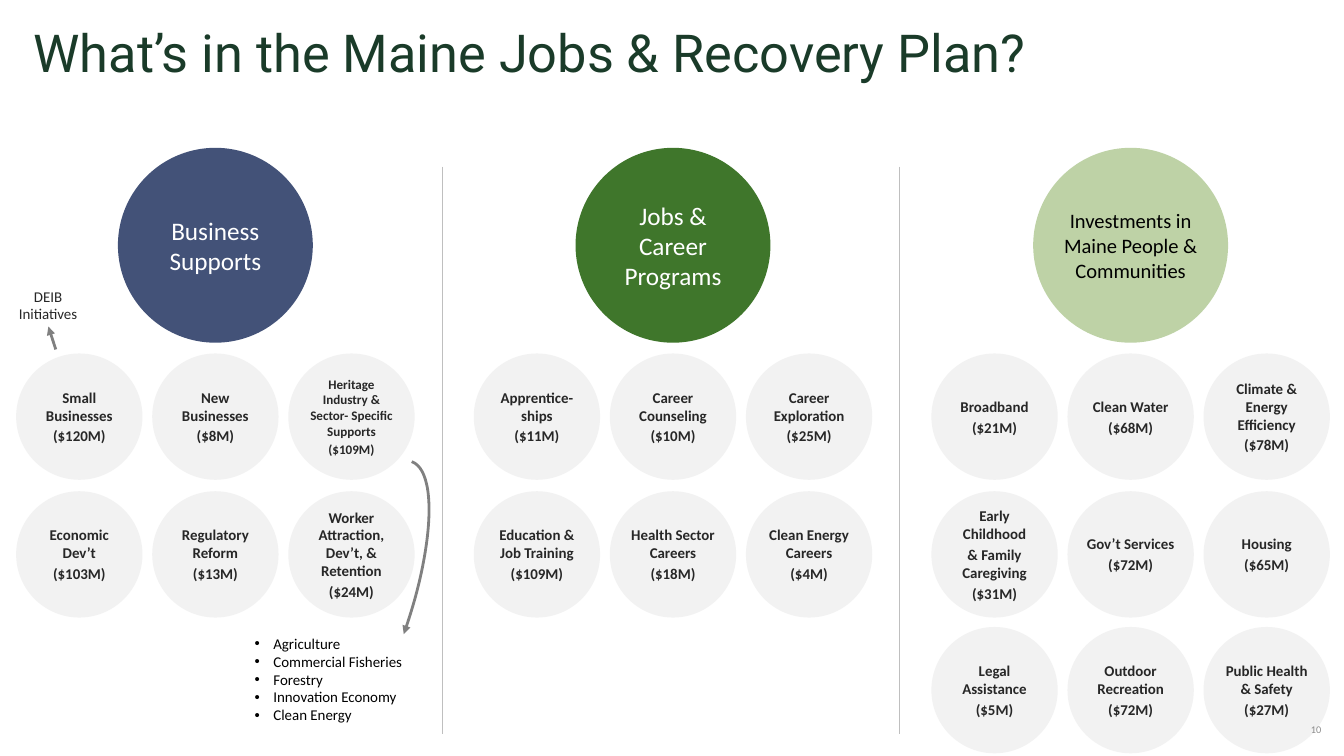
import pptx
import pptx.util
from pptx.dml.color import RGBColor
from pptx.enum.shapes import MSO_CONNECTOR, MSO_SHAPE
from pptx.enum.text import MSO_ANCHOR, PP_ALIGN
from pptx.oxml.ns import qn
from lxml import etree

Inch, Pt = pptx.util.Inches, pptx.util.Pt

HUE = {"title": "1A3B29", "ink": "272727", "black": "000000", "white": "FFFFFF",
       "navy": "435278", "green": "3F762B", "sage": "BED2A6", "disc": "F2F2F2",
       "rule": "BFBFBF", "arrow": "808080", "page": "8C8C8C"}

TITLE = "What’s in the Maine Jobs & Recovery Plan?"
PAGE = "10"
ASIDE = "DEIB Initiatives"
FIELDS = ["Agriculture", "Commercial Fisheries", "Forestry",
          "Innovation Economy", "Clean Energy"]
# Pillar: hub text, fill, ink, text size, then rows of programs
PILLARS = [
    (["Business Supports"], "navy", "white", 27, [
        [["Small Businesses", "($120M)"], ["New Businesses", "($8M)"],
         ["Heritage Industry & Sector- Specific Supports", "($109M)"]],
        [["Economic Dev’t", "($103M)"], ["Regulatory Reform", "($13M)"],
         ["Worker Attraction, Dev’t, & Retention", "($24M)"]]]),
    (["Jobs & Career Programs"], "green", "white", 27, [
        [["Apprentice-ships", "($11M)"], ["Career Counseling", "($10M)"],
         ["Career Exploration", "($25M)"]],
        [["Education & Job Training", "($109M)"], ["Health Sector Careers", "($18M)"],
         ["Clean Energy Careers", "($4M)"]]]),
    (["Investments in Maine People &", "Communities"], "sage", "black", 22, [
        [["Broadband", "($21M)"], ["Clean Water", "($68M)"],
         ["Climate & Energy Efficiency", "($78M)"]],
        [["Early Childhood", "& Family Caregiving", "($31M)"],
         ["Gov’t Services", "($72M)"], ["Housing", "($65M)"]],
        [["Legal Assistance", "($5M)"], ["Outdoor Recreation", "($72M)"],
         ["Public Health & Safety", "($27M)"]]]),
]

# Grid, in inches
WIDE, HIGH = 20, 11.25
LEFT, SPAN = 0.24, 6.81      # first pillar, step between pillars
COL, DISC, HUB = 2.025, 1.88, 2.9
TOP, ROWS = 2.2, [5.26, 7.31, 9.33]
GUTTER = 0.47                # from divider to the pillar on its right
LONG = 40                    # longer labels take the smaller size

deck = pptx.Presentation()
deck.slide_width, deck.slide_height = Inch(WIDE), Inch(HIGH)
slide = deck.slides.add_slide(deck.slide_layouts[6])


def color(name):
    return RGBColor.from_string(HUE[name])


def write(shape, lines, size, ink, bold=False, align=PP_ALIGN.CENTER,
          gap=0, face="Calibri", inset=0, anchor=MSO_ANCHOR.MIDDLE, bullet=0):
    """Fill a shape with paragraphs; gap is a share of the text size."""
    frame = shape.text_frame
    frame.word_wrap = True
    frame.vertical_anchor = anchor
    frame.margin_left = frame.margin_right = Inch(inset)
    frame.margin_top = frame.margin_bottom = Inch(inset / 2)
    frame.text = "\n".join(lines)
    for i, para in enumerate(frame.paragraphs):
        para.alignment = align
        if i and gap:
            para.space_before = Pt(size * gap)
        if bullet:
            props = para._p.get_or_add_pPr()
            props.set("marL", str(Inch(bullet)))
            props.set("indent", str(-Inch(bullet)))
            etree.SubElement(props, qn("a:buFont")).set("typeface", "Arial")
            etree.SubElement(props, qn("a:buChar")).set("char", "•")
        for run in para.runs:
            font = run.font
            font.name, font.size, font.bold = face, Pt(size), bold
            font.color.rgb = color(ink)
    return frame


def disc(x, y, wide, high, fill=None):
    shape = slide.shapes.add_shape(MSO_SHAPE.OVAL, *map(Inch, (x, y, wide, high)))
    shape.shadow.inherit = False
    shape.line.fill.background()
    if fill:
        shape.fill.solid()
        shape.fill.fore_color.rgb = color(fill)
    else:
        shape.fill.background()
    return shape


def stroke(shape, name, width, arrow=False):
    shape.line.color.rgb = color(name)
    shape.line.width = Pt(width)
    if arrow:
        line = shape.line._get_or_add_ln()
        etree.SubElement(line, qn("a:tailEnd")).set("type", "triangle")


def link(x1, y1, x2, y2, *style):
    wire = slide.shapes.add_connector(MSO_CONNECTOR.STRAIGHT,
                                      *map(Inch, (x1, y1, x2, y2)))
    stroke(wire, *style)
    etree.SubElement(wire._element.spPr, qn("a:effectLst"))


def box(x, y, wide, high):
    return slide.shapes.add_textbox(*map(Inch, (x, y, wide, high)))


# Title
head = write(box(0.5, 0.3, 19.07, 0.94), [TITLE], 56, "title", face="Roboto",
             align=PP_ALIGN.LEFT, anchor=MSO_ANCHOR.TOP)
head.paragraphs[0].line_spacing = Pt(67.2)

# Pillars: hub centred over three columns of programs
for n, (label, fill, ink, size, rows) in enumerate(PILLARS):
    left = LEFT + n * SPAN
    mid = left + COL + DISC / 2
    if n:
        link(left - GUTTER, 2.48, left - GUTTER, 10.92, "rule", 0.75)
    write(disc(mid - HUB / 2, TOP, HUB, HUB, fill), label, size, ink)
    for y, row in zip(ROWS, rows):
        for c, lines in enumerate(row):
            small = len(lines[0]) > LONG
            write(disc(left + c * COL, y, DISC, DISC, "disc"), lines,
                  14 if small else 16, "ink", bold=True, gap=0.2)

# Side notes on the first pillar
write(disc(-0.02, 3.99, 1.47, 1.1), [ASIDE], 16, "ink")
link(0.83, 5.2, 0.72, 4.86, "arrow", 3, True)
write(box(3.69, 9.39, 3.14, 1.48), FIELDS, 16, "black", align=PP_ALIGN.LEFT,
      inset=0.1, anchor=MSO_ANCHOR.TOP, bullet=0.28)
curve = slide.shapes.add_shape(MSO_SHAPE.ARC, *map(Inch, (4.57, 6.73, 1.48, 4.92)))
curve.rotation = 19.4
curve.shadow.inherit = False
curve.fill.background()
stroke(curve, "arrow", 3, True)

write(box(18.03, 10.56, 1.73, 0.6), [PAGE], 11, "page",
      align=PP_ALIGN.RIGHT, inset=0.1)

deck.save("out.pptx")
